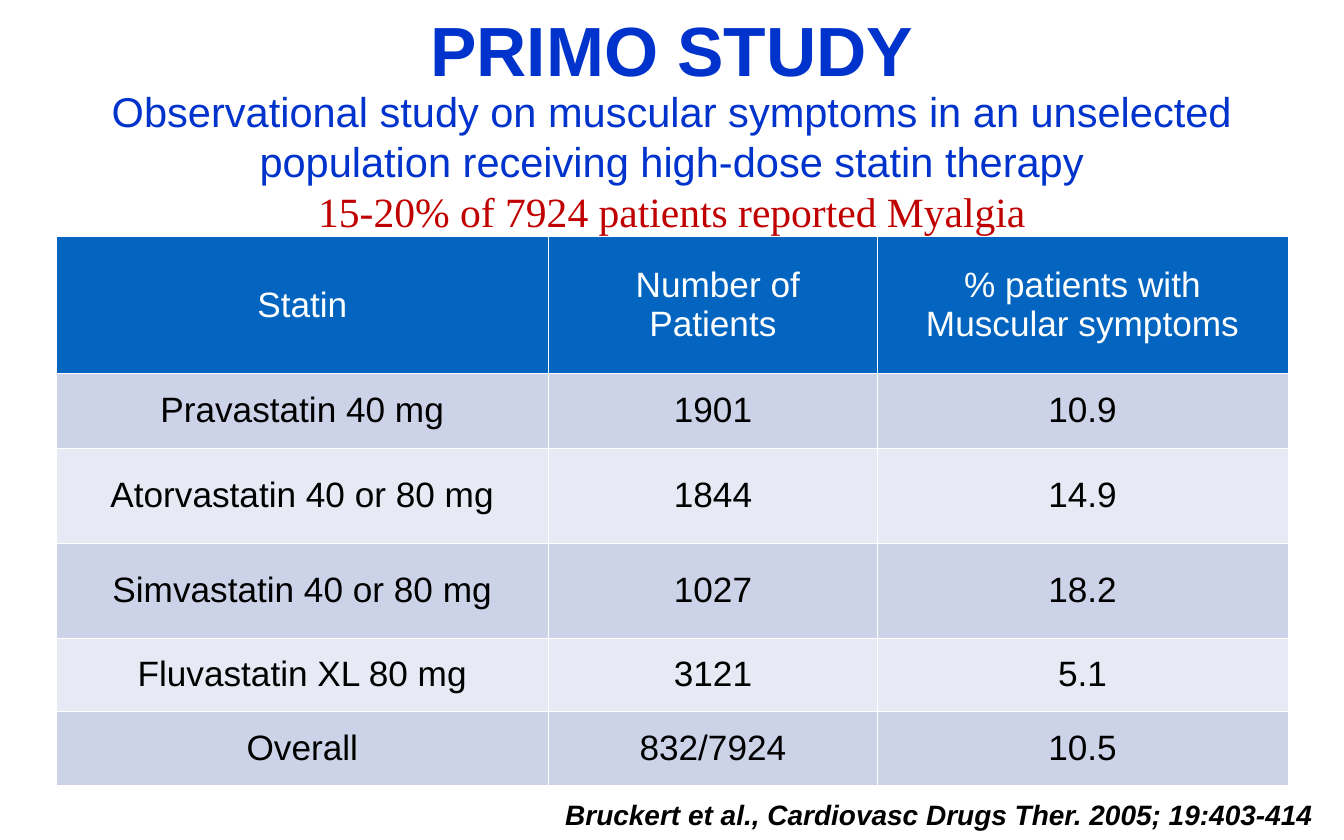
from dataclasses import dataclass

from pptx import Presentation
from pptx import util as u
from pptx.dml.color import RGBColor
from pptx.enum import text
from pptx.oxml import parse_xml
from pptx.oxml.ns import nsdecls

Pt = u.Pt


@dataclass(frozen=True)
class Theme:
    sans: str = "Arial"
    serif: str = "Times New Roman"
    blue: str = "0033CC"
    red: str = "C00000"
    black: str = "000000"
    white: str = "FFFFFF"
    head: str = "0365C0"
    bands: tuple = ("CCD3E8", "E7EAF4")
    title: int = 87
    lead: int = 52
    cell: int = 44
    cite: int = 35


class Deck:
    def __init__(self, theme, wide, high):
        self.theme = theme
        self.prs = Presentation()
        self.prs.slide_width, self.prs.slide_height = Pt(wide), Pt(high)
        self.slide = self.prs.slides.add_slide(self.prs.slide_layouts[5])

    def style(self, par, size, color, face=None, align=text.PP_ALIGN.CENTER, **kind):
        par.alignment = align
        font = par.font
        font.name, font.size = face or self.theme.sans, Pt(size)
        font.color.rgb = RGBColor.from_string(color)
        font.bold, font.italic = kind.get("bold", False), kind.get("italic", False)

    def inset(self, obj, side, top):
        obj.margin_left = obj.margin_right = Pt(side)
        obj.margin_top = obj.margin_bottom = Pt(top)

    def title(self, words, box):
        shape = self.slide.shapes.title
        shape.left, shape.top, shape.width, shape.height = map(Pt, box)
        frame = shape.text_frame
        frame.text = words
        frame.auto_size = text.MSO_AUTO_SIZE.NONE
        frame.vertical_anchor = text.MSO_ANCHOR.MIDDLE
        self.inset(frame, 5, 5)
        self.style(frame.paragraphs[0], self.theme.title, self.theme.blue, bold=True)

    def text(self, lines, box, wrap=True):
        """Each line is its words and a dict of style settings."""
        frame = self.slide.shapes.add_textbox(*map(Pt, box)).text_frame
        frame.word_wrap = wrap
        frame.auto_size = text.MSO_AUTO_SIZE.SHAPE_TO_FIT_TEXT
        self.inset(frame, 16, 8)
        frame.text = "\n".join(words for words, _ in lines)
        for par, (_, look) in zip(frame.paragraphs, lines):
            self.style(par, **look)

    def border(self, cell):
        props = cell._tc.get_or_add_tcPr()
        for spot, tag in enumerate(("lnL", "lnR", "lnT", "lnB")):
            props.insert(spot, parse_xml(
                f'<a:{tag} {nsdecls("a")} w="{Pt(1)}"><a:solidFill>'
                f'<a:srgbClr val="{self.theme.white}"/></a:solidFill></a:{tag}>'))

    def table(self, data, left, top, cols, rows):
        look = self.theme
        grid = self.slide.shapes.add_table(
            len(rows), len(cols), Pt(left), Pt(top), Pt(sum(cols)), Pt(sum(rows))).table
        for col, width in zip(grid.columns, cols):
            col.width = Pt(width)
        for r, (row, high) in enumerate(zip(grid.rows, rows)):
            row.height = Pt(high)
            fill = look.bands[(r - 1) % 2] if r else look.head
            for cell, words in zip(row.cells, data[r]):
                cell.text = words
                cell.vertical_anchor = text.MSO_ANCHOR.MIDDLE
                self.inset(cell, 16.5, 7)
                cell.fill.solid()
                cell.fill.fore_color.rgb = RGBColor.from_string(fill)
                self.border(cell)
                self.style(cell.text_frame.paragraphs[0], look.cell,
                           look.black if r else look.white)


def main():
    theme = Theme()
    deck = Deck(theme, 1680, 1050)

    # Title
    deck.title("PRIMO STUDY", (0, 0, 1680, 121))

    # Results by statin
    deck.table([
        ("Statin", " Number of Patients", "% patients with Muscular symptoms"),
        ("Pravastatin 40 mg", "1901", "10.9"),
        ("Atorvastatin 40 or 80 mg", "1844", "14.9"),
        ("Simvastatin 40 or 80 mg", "1027", "18.2"),
        ("Fluvastatin XL 80 mg", "3121", "5.1"),
        ("Overall", "832/7924", "10.5"),
    ], 70, 295.5, (616, 410.5, 513.5), (171.5, 93, 119, 119, 91, 92.5))

    # Study summary, kept clear of the table below
    deck.text([
        ("Observational study on muscular symptoms in an unselected "
         "population receiving high-dose statin therapy",
         dict(size=theme.lead, color=theme.blue)),
        ("15-20% of 7924 patients reported Myalgia",
         dict(size=theme.lead, color=theme.red, face=theme.serif)),
    ], (118, 100, 1444, 195.5))

    # Citation
    deck.text([
        ("Bruckert et al., Cardiovasc Drugs Ther. 2005; 19:403-414",
         dict(size=theme.cite, color=theme.black, align=text.PP_ALIGN.LEFT,
              bold=True, italic=True)),
    ], (690.5, 989.5, 977, 58), wrap=False)

    deck.prs.save("out.pptx")


if __name__ == "__main__":
    main()
